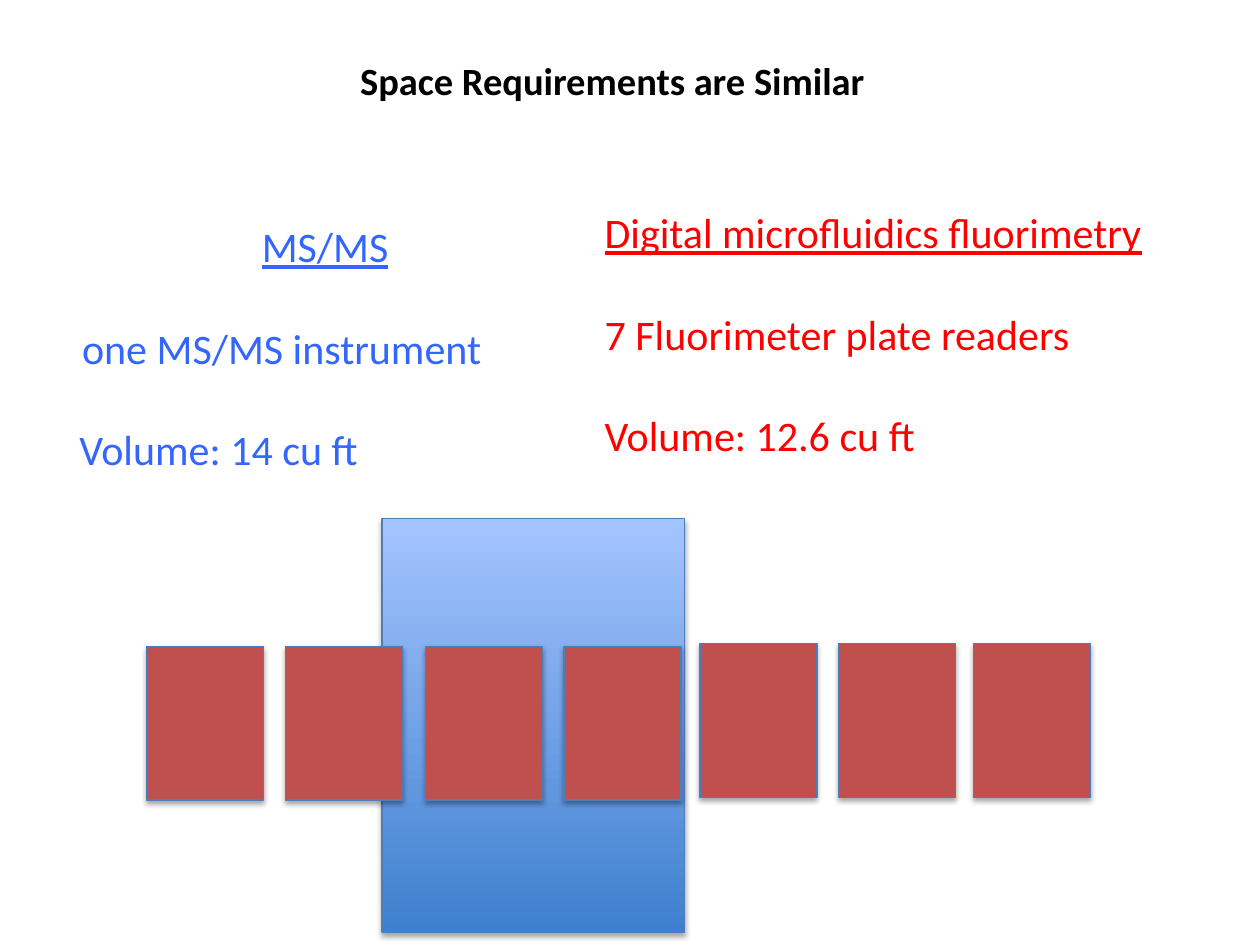
from dataclasses import dataclass

from lxml.etree import SubElement
from pptx import Presentation
from pptx.dml.color import RGBColor
from pptx.enum.shapes import MSO_SHAPE
from pptx.enum.text import PP_ALIGN
from pptx.oxml.ns import qn
from pptx.shapes.autoshape import Shape
from pptx.slide import Slide
from pptx.util import Cm, Pt


@dataclass(frozen=True)
class Theme:
    font: str = "Calibri"
    title_size: float = 22
    body_size: float = 24
    gap: float = 29.3
    black: str = "000000"
    blue: str = "3366FF"
    red: str = "FF0000"
    reader: str = "C0504D"
    outline: str = "4B7EBC"
    gradient: tuple[str, str] = ("3F80CE", "A4C4FF")


@dataclass(frozen=True)
class Box:
    left: float
    top: float
    width: float
    height: float

    def lengths(self) -> tuple[Cm, Cm, Cm, Cm]:
        return Cm(self.left), Cm(self.top), Cm(self.width), Cm(self.height)


@dataclass(frozen=True)
class Line:
    text: str
    bold: bool = False
    underline: bool = False
    align: PP_ALIGN = PP_ALIGN.LEFT
    indent: float = 0


@dataclass(frozen=True)
class TextBlock:
    box: Box
    color: str
    size: float
    lines: tuple[Line, ...]


THEME = Theme()
BLOCKS = (
    TextBlock(Box(7.01, 1.02, 10.85, 1.19), THEME.black, THEME.title_size,
              (Line("Space Requirements are Similar", bold=True),)),
    TextBlock(Box(1.35, 4.32, 8.66, 5.38), THEME.blue, THEME.body_size,
              (Line("MS/MS", underline=True, align=PP_ALIGN.CENTER, indent=1.75),
               Line("one MS/MS instrument", align=PP_ALIGN.CENTER),
               Line("Volume: 14 cu ft"))),
    TextBlock(Box(11.94, 4.04, 11.48, 5.38), THEME.red, THEME.body_size,
              (Line("Digital microfluidics fluorimetry", underline=True),
               Line("7 Fluorimeter plate readers"),
               Line("Volume: 12.6 cu ft"))),
)
INSTRUMENT = Box(7.7, 10.46, 6.1, 8.33)
READER_ROWS = ((13.03, (2.96, 5.75, 8.58, 11.37)), (12.98, (14.11, 16.9, 19.62)))
READER_SIZE = (2.36, 3.1)


def add_text(s: Slide, block: TextBlock) -> None:
    tf = s.shapes.add_textbox(*block.box.lengths()).text_frame
    tf.word_wrap = True
    for i, line in enumerate(block.lines):
        p = tf.add_paragraph() if i else tf.paragraphs[0]
        p.alignment = line.align
        p.space_before = Pt(THEME.gap if i else 0)
        if line.indent:
            p._p.get_or_add_pPr().set("marL", str(Cm(line.indent)))
        r = p.add_run()
        r.text = line.text
        formats = {"name": THEME.font, "size": Pt(block.size),
                   "bold": line.bold, "underline": line.underline}
        for name, value in formats.items():
            setattr(r.font, name, value)
        r.font.color.rgb = RGBColor.from_string(block.color)


def add_shadow(sp: Shape) -> None:
    sp.shadow.inherit = False
    effects = sp._element.spPr.find(qn("a:effectLst"))
    shadow = SubElement(effects, qn("a:outerShdw"), blurRad=str(Pt(3.1)),
                        dist=str(Pt(1.8)), dir="5400000", rotWithShape="0")
    color = SubElement(shadow, qn("a:srgbClr"), val=THEME.black)
    SubElement(color, qn("a:alpha"), val="35000")


def add_rect(s: Slide, box: Box) -> Shape:
    sp = s.shapes.add_shape(MSO_SHAPE.RECTANGLE, *box.lengths())
    sp.line.color.rgb = RGBColor.from_string(THEME.outline)
    sp.line.width = Pt(0.75)
    add_shadow(sp)
    return sp


def add_instrument(s: Slide) -> None:
    fill = add_rect(s, INSTRUMENT).fill
    fill.gradient()
    fill.gradient_angle = 90
    for stop, color in zip(fill.gradient_stops, THEME.gradient):
        stop.color.rgb = RGBColor.from_string(color)


def add_readers(s: Slide) -> None:
    for top, lefts in READER_ROWS:
        for left in lefts:
            sp = add_rect(s, Box(left, top, *READER_SIZE))
            sp.fill.solid()
            sp.fill.fore_color.rgb = RGBColor.from_string(THEME.reader)


def main() -> None:
    """Build the slide comparing the space both methods need."""
    prs = Presentation()
    prs.slide_width, prs.slide_height = Cm(25.4), Cm(19.05)
    s = prs.slides.add_slide(prs.slide_layouts[6])
    for block in BLOCKS:
        add_text(s, block)
    add_instrument(s)
    add_readers(s)
    prs.save("out.pptx")


if __name__ == "__main__":
    main()
